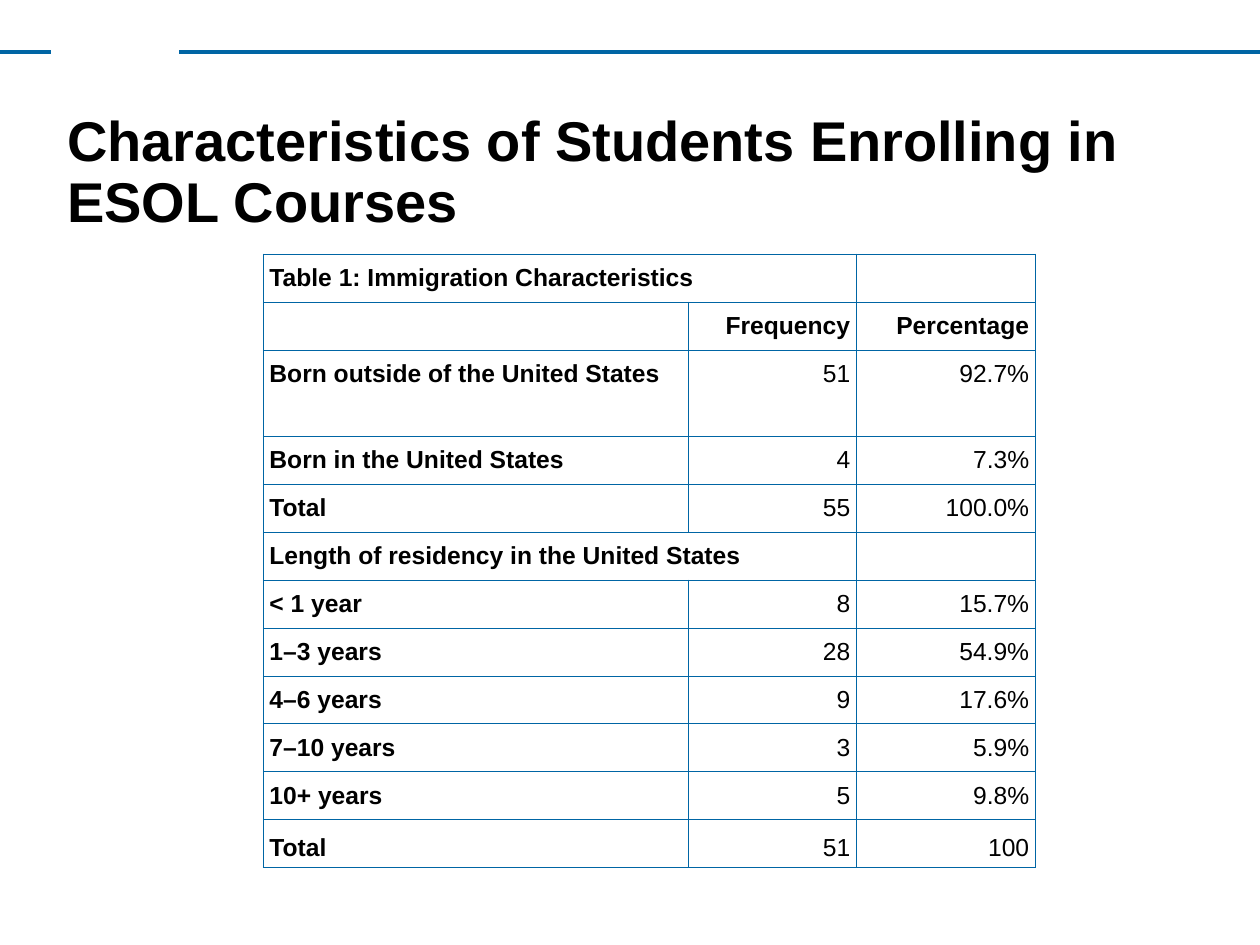
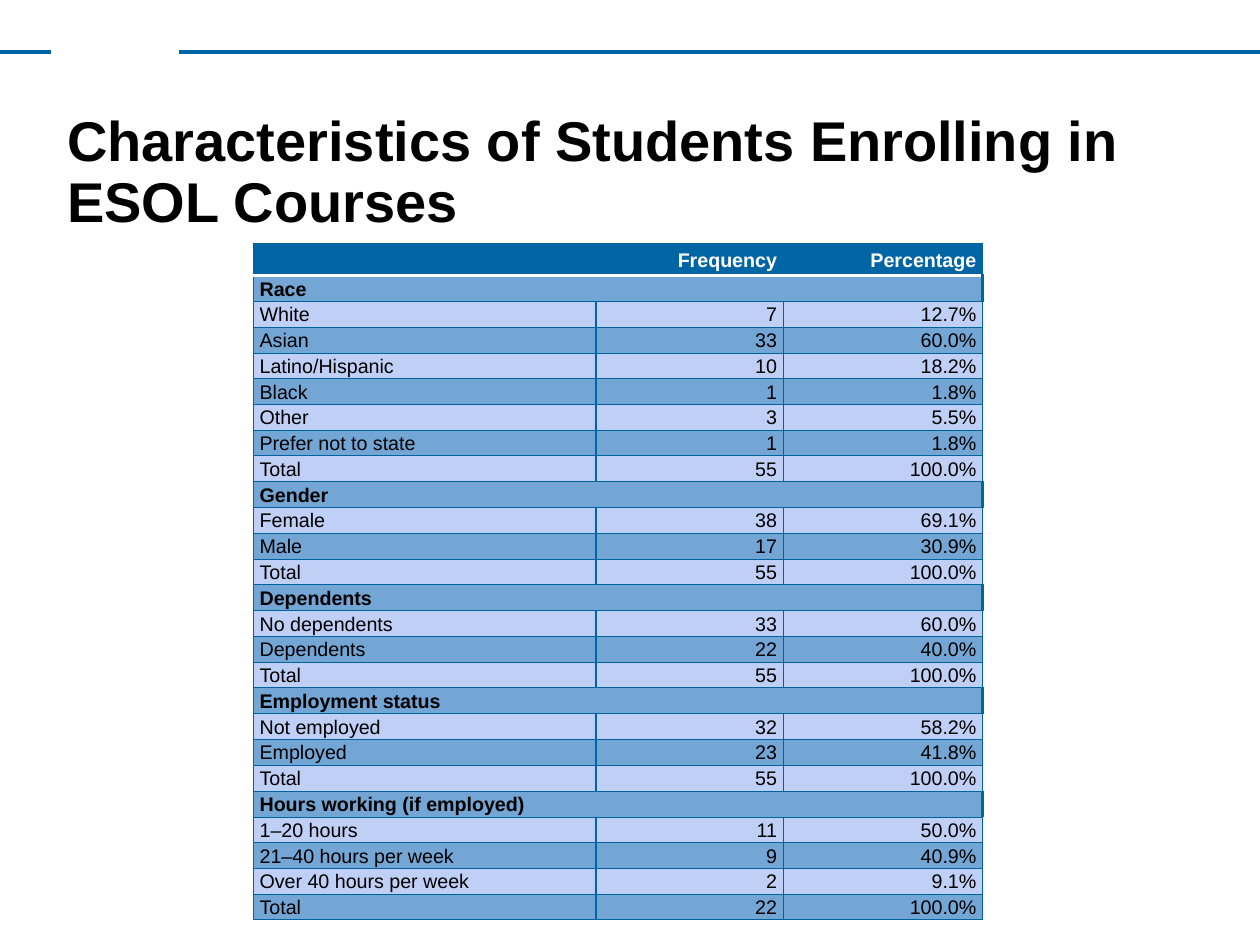
"""Build two slides on the students who enroll in ESOL courses."""
import lxml.etree
import pptx
import pptx.dml.color
import pptx.enum.shapes
import pptx.enum.text
import pptx.oxml.ns
import pptx.util

Pt = pptx.util.Pt
RGB = pptx.dml.color.RGBColor
ALIGN = pptx.enum.text.PP_ALIGN
ANCHOR = pptx.enum.text.MSO_ANCHOR
qn = pptx.oxml.ns.qn

BLUE = RGB(0x00, 0x65, 0xA4)
EDGE = RGB(0x00, 0x63, 0xA0)
DARK = RGB(0x73, 0xA5, 0xD5)
LIGHT = RGB(0xBF, 0xCF, 0xF5)
BLACK = RGB(0x00, 0x00, 0x00)
WHITE = RGB(0xFF, 0xFF, 0xFF)
PLAIN_STYLE = "{2D5ABB26-0587-4C30-8999-92F81FD0307C}"

TITLE = "Characteristics of Students Enrolling in ESOL Courses"
STAY = [
    ("Table 1: Immigration Characteristics", None, ""),
    ("", "Frequency", "Percentage"),
    ("Born outside of the United States", "51", "92.7%"),
    ("Born in the United States", "4", "7.3%"),
    ("Total", "55", "100.0%"),
    ("Length of residency in the United States", None, ""),
    ("< 1 year", "8", "15.7%"),
    ("1–3 years", "28", "54.9%"),
    ("4–6 years", "9", "17.6%"),
    ("7–10 years", "3", "5.9%"),
    ("10+ years", "5", "9.8%"),
    ("Total", "51", "100"),
]
PEOPLE = [
    ("", "Frequency", "Percentage"),
    ("Race", None, None),
    ("White", "7", "12.7%"),
    ("Asian", "33", "60.0%"),
    ("Latino/Hispanic", "10", "18.2%"),
    ("Black", "1", "1.8%"),
    ("Other", "3", "5.5%"),
    ("Prefer not to state", "1", "1.8%"),
    ("Total", "55", "100.0%"),
    ("Gender", None, None),
    ("Female", "38", "69.1%"),
    ("Male", "17", "30.9%"),
    ("Total", "55", "100.0%"),
    ("Dependents", None, None),
    ("No dependents", "33", "60.0%"),
    ("Dependents", "22", "40.0%"),
    ("Total", "55", "100.0%"),
    ("Employment status", None, None),
    ("Not employed", "32", "58.2%"),
    ("Employed", "23", "41.8%"),
    ("Total", "55", "100.0%"),
    ("Hours working (if employed)", None, None),
    ("1–20 hours", "11", "50.0%"),
    ("21–40 hours per week", "9", "40.9%"),
    ("Over 40 hours per week", "2", "9.1%"),
    ("Total", "22", "100.0%"),
]


def write(frame, text, size=20, color=BLACK, bold=False, align=ALIGN.LEFT, space=1.0):
    """Put one formatted paragraph into a text frame."""
    para = frame.paragraphs[0]
    para.alignment = align
    para.line_spacing = space
    if text:
        run = para.add_run()
        run.text = text
        run.font.name = "Arial"
        run.font.size = Pt(size)
        run.font.bold = bold
        run.font.color.rgb = color


def border(cell, **sides):
    """Draw cell borders, each given as a colour and a width."""
    props = cell._tc.get_or_add_tcPr()
    names = [side for side in "LRTB" if side in sides]
    for place, side in enumerate(names):
        color, width = sides[side]
        line = lxml.etree.Element(qn("a:ln" + side), w=str(Pt(width)))
        fill = lxml.etree.SubElement(line, qn("a:solidFill"))
        lxml.etree.SubElement(fill, qn("a:srgbClr"), val=str(color))
        props.insert(place, line)


class Deck:
    """Hold the shared style and the current slide."""

    def __init__(self):
        """Start an empty deck."""
        self.file = pptx.Presentation()
        self.file.slide_width = Pt(1024)
        self.file.slide_height = Pt(768)
        self.slide = None

    def page(self, title):
        """Add a slide with its top rule and title."""
        self.slide = self.file.slides.add_slide(self.file.slide_layouts[6])
        self.rule(145.5, 1024)
        self.rule(0, 41.5)
        box = self.slide.shapes.add_textbox(Pt(47.5), Pt(85), Pt(937), Pt(158))
        frame = box.text_frame
        frame.word_wrap = True
        frame.margin_left = frame.margin_right = Pt(7.2)
        frame.margin_top = frame.margin_bottom = Pt(7.2)
        write(frame, title, size=45.5, bold=True, space=0.9)

    def rule(self, left, right):
        """Draw a part of the top rule."""
        kind = pptx.enum.shapes.MSO_CONNECTOR.STRAIGHT
        line = self.slide.shapes.add_connector(kind, Pt(left), Pt(42.5), Pt(right), Pt(42.5))
        line.line.color.rgb = BLUE
        line.line.width = Pt(3)
        lxml.etree.SubElement(line._element.spPr, qn("a:effectLst"))

    def table(self, rows, left, top, widths, heights, style):
        """Add a table, with style giving the look of each cell."""
        shape = self.slide.shapes.add_table(
            len(rows), len(widths), Pt(left), Pt(top), Pt(sum(widths)), Pt(sum(heights)))
        grid = shape.table
        grid.first_row = grid.horz_banding = False
        grid._tbl.tblPr.find(qn("a:tableStyleId")).text = PLAIN_STYLE
        for col, width in zip(grid.columns, widths):
            col.width = Pt(width)
        for r, (row, height) in enumerate(zip(rows, heights)):
            grid.rows[r].height = Pt(height)
            span = 1 + row.count(None)
            if span > 1:
                grid.cell(r, 0).merge(grid.cell(r, span - 1))
            for c, text in enumerate(row):
                cell = grid.cell(r, c)
                cell.margin_top = cell.margin_bottom = 0
                if text is not None:
                    self.fill(cell, text, c, **style(r, c, span))

    def fill(self, cell, text, col, pad, anchor, back, edges, **form):
        """Give a cell its text, fill and borders."""
        cell.margin_left = cell.margin_right = Pt(5)
        cell.margin_top = cell.margin_bottom = Pt(pad)
        cell.vertical_anchor = anchor
        if back is None:
            cell.fill.background()
        else:
            cell.fill.solid()
            cell.fill.fore_color.rgb = back
        border(cell, **edges)
        write(cell.text_frame, text, align=ALIGN.RIGHT if col else ALIGN.LEFT, **form)


def stay_style(r, c, span):
    """Style the plain grid with bold labels."""
    last = r == len(STAY) - 1
    return dict(pad=5, anchor=ANCHOR.BOTTOM if last else ANCHOR.TOP, back=None,
                edges=dict.fromkeys("LRTB", (BLUE, 0.75)),
                size=20, bold=c == 0 or r == 1, space=1.15)


def people_style(r, c, span):
    """Style the banded grid with a blue head row."""
    head = r == 0
    edges = dict.fromkeys("LRTB", (EDGE, 0.75))
    if head:
        edges["B"] = (WHITE, 2)
        if c > 0:
            del edges["L"]
        if c < 2:
            del edges["R"]
    elif c == 0:
        edges["R"] = (BLUE, 2)
    return dict(pad=0, anchor=ANCHOR.MIDDLE,
                back=BLUE if head else DARK if r % 2 else LIGHT, edges=edges,
                size=16, color=WHITE if head else BLACK,
                bold=head or span > 1, space=1.07)


def main():
    """Build and save the deck."""
    deck = Deck()
    deck.page(TITLE)
    tall = [70 if r == 2 else 39 for r in range(len(STAY))]
    deck.table(STAY, 214, 206.5, [345.5, 136.5, 145.5], tall, stay_style)
    deck.page(TITLE)
    low = [25.9] + [21.2 if None in row else 20.9 for row in PEOPLE[1:]]
    deck.table(PEOPLE, 206, 198, [278.5, 152, 162], low, people_style)
    deck.file.save("out.pptx")


if __name__ == "__main__":
    main()
